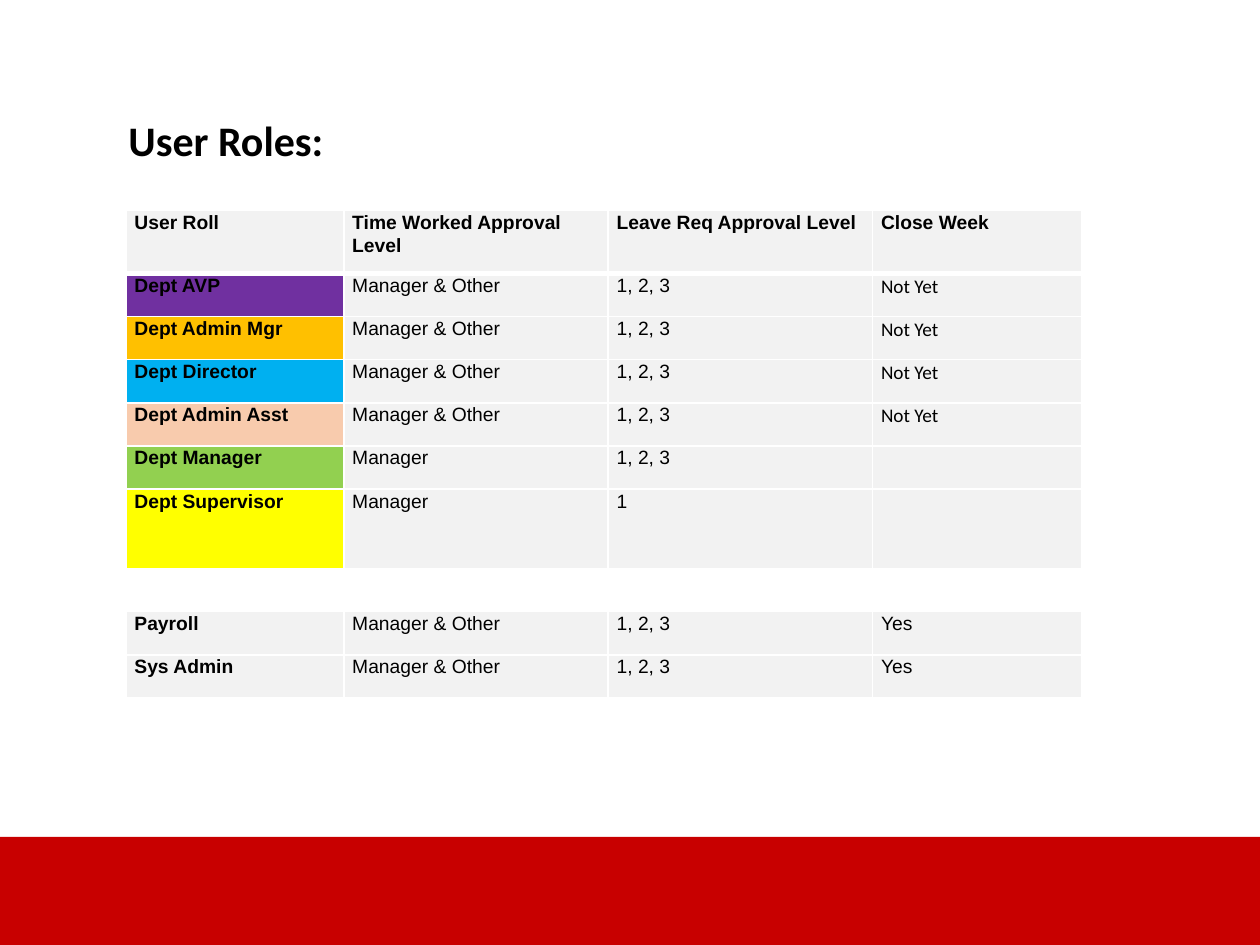
import pptx
import pptx.dml.color
import pptx.enum.shapes
import pptx.enum.text
import pptx.oxml.ns
import pptx.util
from lxml import etree
from pptx.util import Cm

RGBColor = pptx.dml.color.RGBColor
BLACK = RGBColor(0x00, 0x00, 0x00)
WHITE = RGBColor(0xFF, 0xFF, 0xFF)
RED = RGBColor(0xC8, 0x00, 0x00)
GREY = RGBColor(0xF2, 0xF2, 0xF2)
PURPLE = RGBColor(0x70, 0x30, 0xA0)
ORANGE = RGBColor(0xFF, 0xC0, 0x00)
BLUE = RGBColor(0x00, 0xB0, 0xF0)
PEACH = RGBColor(0xF8, 0xCB, 0xAD)
GREEN = RGBColor(0x92, 0xD0, 0x50)
YELLOW = RGBColor(0xFF, 0xFF, 0x00)

HEADINGS = ("User Roll", "Time Worked Approval Level", "Leave Req Approval Level", "Close Week")
ROLES = [
    (PURPLE, "Dept AVP", "Manager & Other", "1, 2, 3", "Not Yet"),
    (ORANGE, "Dept Admin Mgr", "Manager & Other", "1, 2, 3", "Not Yet"),
    (BLUE, "Dept Director", "Manager & Other", "1, 2, 3", "Not Yet"),
    (PEACH, "Dept Admin Asst", "Manager & Other", "1, 2, 3", "Not Yet"),
    (GREEN, "Dept Manager", "Manager", "1, 2, 3", ""),
    (YELLOW, "Dept Supervisor", "Manager", "1", ""),
    (None, "", "", "", ""),
    (GREY, "Payroll", "Manager & Other", "1, 2, 3", "Yes"),
    (GREY, "Sys Admin", "Manager & Other", "1, 2, 3", "Yes"),
]
COLUMN_WIDTHS = (4.39, 5.33, 5.33, 4.22)
HEADER_HEIGHT, ROLE_HEIGHT, SUPERVISOR_HEIGHT = 1.27, 0.87, 1.6


def add_words(paragraph, words, size, font_name, bold):
    """Add one black run to a paragraph."""
    paragraph.line_spacing = 1.07
    run = paragraph.add_run()
    run.text = words
    run.font.size = pptx.util.Pt(size)
    run.font.name = font_name
    run.font.bold = bold
    run.font.color.rgb = BLACK


def add_footer_band(slide):
    """Draw the red band along the foot of the slide."""
    band = slide.shapes.add_shape(
        pptx.enum.shapes.MSO_SHAPE.RECTANGLE, Cm(0), Cm(16.87), Cm(25.4), Cm(2.18))
    band.shadow.inherit = False
    band.fill.solid()
    band.fill.fore_color.rgb = RED
    band.line.fill.background()


def add_title(slide):
    """Place the heading above the table."""
    title = slide.shapes.add_textbox(Cm(2.34), Cm(2.11), Cm(4.5), Cm(1.3))
    title.text_frame.word_wrap = False
    title.text_frame.auto_size = pptx.enum.text.MSO_AUTO_SIZE.SHAPE_TO_FIT_TEXT
    paragraph = title.text_frame.paragraphs[0]
    paragraph.space_after = pptx.util.Pt(8)
    add_words(paragraph, "User Roles:", 24, "Calibri", True)


def set_borders(cell, top, bottom):
    """Give a cell white borders, with top and bottom widths in points."""
    properties = cell._tc.get_or_add_tcPr()
    for side, width in (("L", 1), ("R", 1), ("T", top), ("B", bottom)):
        border = etree.SubElement(
            properties, pptx.oxml.ns.qn(f"a:ln{side}"), w=str(pptx.util.Pt(width)))
        fill = etree.SubElement(border, pptx.oxml.ns.qn("a:solidFill"))
        etree.SubElement(fill, pptx.oxml.ns.qn("a:srgbClr"), val=str(WHITE))


def fill_cell(cell, words, colour, bold, top, bottom):
    """Set the margins, borders, fill and words of one cell."""
    cell.margin_left = cell.margin_right = Cm(0.17)
    cell.margin_top = cell.margin_bottom = Cm(0)
    set_borders(cell, top, bottom)
    if colour is None:
        cell.fill.background()
    else:
        cell.fill.solid()
        cell.fill.fore_color.rgb = colour
    if words:
        font_name = "Calibri" if words == "Not Yet" else "Arial"
        add_words(cell.text_frame.paragraphs[0], words, 11, font_name, bold)


def add_role_table(slide):
    """Build the table of approval rights by role."""
    rows = [(GREY, *HEADINGS), *ROLES]
    heights = [HEADER_HEIGHT] + [
        SUPERVISOR_HEIGHT if role[1] == "Dept Supervisor" else ROLE_HEIGHT for role in ROLES]
    table = slide.shapes.add_table(
        len(rows), len(HEADINGS), Cm(2.54), Cm(4.24),
        Cm(sum(COLUMN_WIDTHS)), Cm(sum(heights))).table
    table.first_row = table.horz_banding = False
    for column, width in zip(table.columns, COLUMN_WIDTHS):
        column.width = Cm(width)
    for row_index, (role_colour, *entries) in enumerate(rows):
        table.rows[row_index].height = Cm(heights[row_index])
        for column_index, words in enumerate(entries):
            is_role = column_index == 0
            colour = role_colour if is_role or role_colour is None else GREY
            fill_cell(table.cell(row_index, column_index), words, colour,
                      bold=is_role or row_index == 0,
                      top=3 if row_index == 1 else 1,
                      bottom=3 if row_index == 0 else 1)


def main():
    """Build and save the user roles slide."""
    presentation = pptx.Presentation()
    presentation.slide_width = Cm(25.4)
    presentation.slide_height = Cm(19.05)
    slide = presentation.slides.add_slide(presentation.slide_layouts[6])
    add_footer_band(slide)
    add_title(slide)
    add_role_table(slide)
    presentation.save("out.pptx")


if __name__ == "__main__":
    main()
